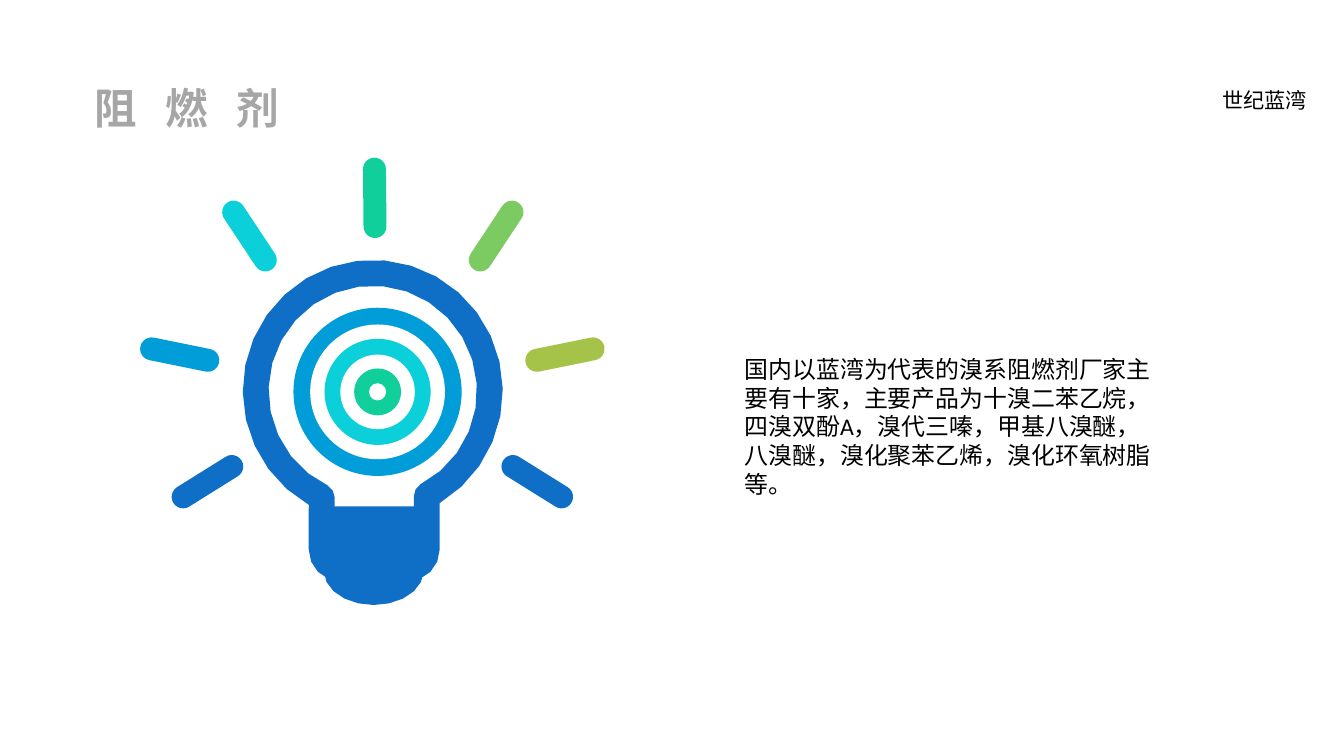
"""Build a slide on flame retardants with a light bulb, its rays and a paragraph."""
import math

import pptx
import pptx.dml.color
import pptx.enum.shapes
import pptx.enum.text
import pptx.util

RGBColor = pptx.dml.color.RGBColor
BLUE = RGBColor(0x0F, 0x6F, 0xC6)
SKY = RGBColor(0x00, 0x9D, 0xD9)
CYAN = RGBColor(0x0B, 0xD0, 0xD9)
MINT = RGBColor(0x10, 0xCF, 0x9B)
GREEN = RGBColor(0x7C, 0xCA, 0x62)
OLIVE = RGBColor(0xA5, 0xC2, 0x49)
WHITE = RGBColor(0xFF, 0xFF, 0xFF)
BLACK = RGBColor(0x00, 0x00, 0x00)
GRAY = RGBColor(0xA6, 0xA6, 0xA6)

CELL = pptx.util.Inches(1)
COLUMNS, ROWS = 14.06, 7.91
SHAPES = pptx.enum.shapes.MSO_SHAPE


def arc(column, row, radius_x, radius_y, start, end):
    """Return points along an elliptical arc, in grid cells."""
    steps = math.ceil(abs(end - start) * math.sqrt(radius_x) / 14)
    angles = [math.radians(start + (end - start) * step / steps) for step in range(steps + 1)]
    return [(column + radius_x * math.cos(a), row + radius_y * math.sin(a)) for a in angles]


def paint(shape, color):
    """Give a shape a plain fill without line or shadow."""
    shape.shadow.inherit = False
    shape.fill.solid()
    shape.fill.fore_color.rgb = color
    shape.line.fill.background()


presentation = pptx.Presentation()
presentation.slide_width = round(COLUMNS * CELL)
presentation.slide_height = round(ROWS * CELL)
slide = presentation.slides.add_slide(presentation.slide_layouts[6])

bulb_column, bulb_row = 3.9, 4.09
ray_length, ray_width = 0.84, 0.24
rays = [
    (1.72, 5.04, 32, BLUE),
    (2.01, 3.71, -11.5, OLIVE),
    (1.29, 2.47, -56.5, GREEN),
    (0.02, 2.07, 89.5, MINT),
    (-1.73, 5.04, -32, BLUE),
    (-2.02, 3.71, 11.5, SKY),
    (-1.29, 2.47, 56.5, CYAN),
]
for offset, row, angle, color in rays:
    ray = slide.shapes.add_shape(
        SHAPES.ROUNDED_RECTANGLE,
        round((bulb_column + offset - ray_length / 2) * CELL),
        round((row - ray_width / 2) * CELL),
        round(ray_length * CELL),
        round(ray_width * CELL),
    )
    ray.adjustments[0] = 0.5
    ray.rotation = angle
    paint(ray, color)

base = [arc(3.91, 5.98, 0.52, 0.35, 0, 180)]
glass_outside = (
    arc(bulb_column, bulb_row, 1.36, 1.37, 119.5, 419)
    + arc(4.27, 5.75, 0.33, 0.33, 0, 90)
    + arc(3.56, 5.75, 0.33, 0.33, 90, 180)
)
glass_inside = (
    arc(bulb_column, bulb_row, 1.09, 1.1, 115, 423)
    + arc(4.47, 5.19, 0.14, 0.14, 240, 180)
    + [(4.33, 5.3), (3.5, 5.3)]
    + arc(3.37, 5.2, 0.13, 0.13, 0, -62)
)
for contours in (base, [glass_outside, glass_inside]):
    contours = [[(x * CELL, y * CELL) for x, y in contour] for contour in contours]
    builder = slide.shapes.build_freeform(*contours[0][0])
    builder.add_line_segments(contours[0][1:], close=True)
    for contour in contours[1:]:
        builder.move_to(*contour[0])
        builder.add_line_segments(contour[1:], close=True)
    paint(builder.convert_to_shape(), BLUE)

target_column, target_row = 3.95, 4.1
discs = [(1.76, SKY), (1.41, WHITE), (1.11, CYAN), (0.78, WHITE), (0.49, MINT), (0.18, WHITE)]
for diameter, color in discs:
    disc = slide.shapes.add_shape(
        SHAPES.OVAL,
        round((target_column - diameter / 2) * CELL),
        round((target_row - diameter / 2) * CELL),
        round(diameter * CELL),
        round(diameter * CELL),
    )
    paint(disc, color)

texts = [
    {
        "text": "世纪蓝湾",
        "place": (12.69, 0.86, 1.32, 0.37),
        "font": {"size": pptx.util.Pt(16), "name": "Calibri"},
        "color": BLACK,
    },
    {
        "text": "阻燃剂",
        "place": (0.99, 0.75, 5.34, 0.48),
        "font": {"size": pptx.util.Pt(32), "name": "Arial", "bold": True},
        "color": GRAY,
        "frame": {"margin_left": 0, "margin_top": 0, "margin_right": 0, "margin_bottom": 0},
        "paragraph": {"line_spacing": 1.2, "space_after": pptx.util.Pt(6)},
        "tracking": 2150,
    },
    {
        "text": "国内以蓝湾为代表的溴系阻燃剂厂家主要有十家，主要产品为十溴二苯乙烷，"
        "四溴双酚A，溴代三嗪，甲基八溴醚，八溴醚，溴化聚苯乙烯，溴化环氧树脂等。",
        "place": (7.69, 3.66, 4.49, 1.61),
        "font": {"size": pptx.util.Pt(18), "name": "Calibri"},
        "color": BLACK,
    },
]
for text in texts:
    box = slide.shapes.add_textbox(*[round(length * CELL) for length in text["place"]])
    frame = box.text_frame
    frame.word_wrap = True
    frame.auto_size = pptx.enum.text.MSO_AUTO_SIZE.SHAPE_TO_FIT_TEXT
    paragraph = frame.paragraphs[0]
    run = paragraph.add_run()
    run.text = text["text"]
    run.font.color.rgb = text["color"]
    for target, key in ((frame, "frame"), (paragraph, "paragraph"), (run.font, "font")):
        for attribute, value in text.get(key, {}).items():
            setattr(target, attribute, value)
    if "tracking" in text:
        run._r.get_or_add_rPr().set("spc", str(text["tracking"]))

presentation.save("out.pptx")
